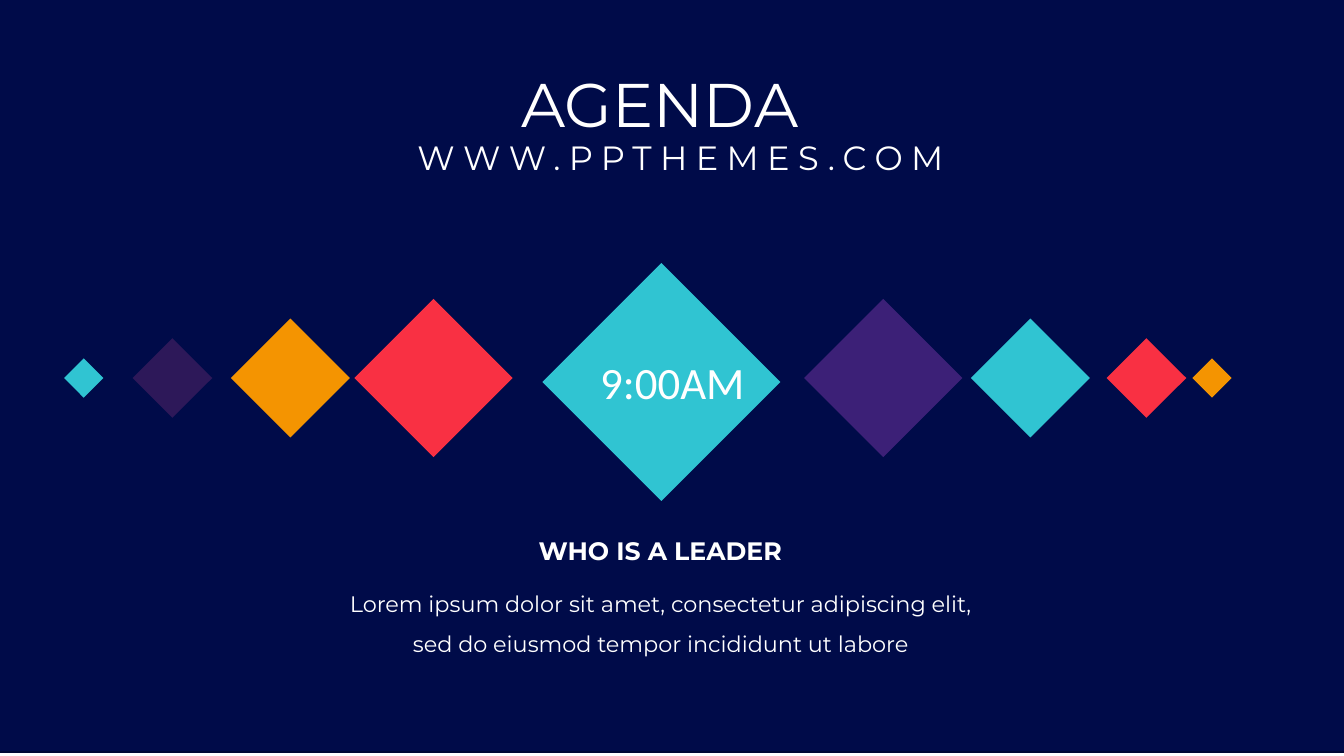
from pptx import Presentation
from pptx.dml.color import RGBColor
from pptx.enum.shapes import MSO_SHAPE as Shape
from pptx.enum.text import MSO_AUTO_SIZE as AutoSize, PP_ALIGN as Align
from pptx.util import Inches, Pt

COLORS = {
    "navy": "000B49", "edge": "000836", "teal": "30C4D2", "orange": "F49401",
    "purple": "3C2077", "plum": "2D1859", "red": "F93043", "white": "FFFFFF",
}

# Diamonds: centre x, centre y, size, colour
DIAMONDS = [
    (0.83, 3.75, 0.39, "teal"),
    (1.71, 3.75, 0.79, "plum"),
    (2.88, 3.75, 1.18, "orange"),
    (4.3, 3.75, 1.57, "red"),
    (6.56, 3.79, 2.36, "teal"),
    (8.76, 3.75, 1.57, "purple"),
    (10.22, 3.75, 1.18, "teal"),
    (11.37, 3.75, 0.79, "red"),
    (12.02, 3.75, 0.39, "orange"),
]

# Texts: wording, (left, top, width, height), size, other settings
TEXTS = [
    ("AGENDA", (3.35, 0.61, 6.39, 0.84), 44, {}),
    ("WWW.PPTHEMES.COM", (4.04, 1.31, 6.11, 0.5), 24,
     {"align": Align.LEFT, "letter_spacing": 6}),
    ("9:00AM", (5.63, 3.47, 2.08, 0.64), 32, {"font": "Calibri"}),
    ("WHO IS A LEADER", (5.23, 5.26, 2.64, 0.4), 18, {"bold": True, "wrap": False}),
    ("Lorem ipsum dolor sit amet, consectetur adipiscing elit, "
     "sed do eiusmod tempor incididunt ut labore",
     (3.32, 5.67, 6.47, 0.86), 16, {"line_spacing": 1.5}),
]


def color(name):
    return RGBColor.from_string(COLORS[name])


def add_filled(slide, kind, box, fill, line=None):
    shape = slide.shapes.add_shape(kind, *map(Inches, box))
    shape.shadow.inherit = False
    shape.fill.solid()
    shape.fill.fore_color.rgb = color(fill)
    if line:
        shape.line.color.rgb = color(line)
        shape.line.width = Pt(1)
    else:
        shape.line.fill.background()


def add_text(slide, text, box, size, font="Montserrat", align=Align.CENTER,
             bold=False, wrap=True, line_spacing=None, letter_spacing=None):
    frame = slide.shapes.add_textbox(*map(Inches, box)).text_frame
    frame.text = text
    frame.word_wrap = wrap
    frame.auto_size = AutoSize.SHAPE_TO_FIT_TEXT
    paragraph = frame.paragraphs[0]
    paragraph.alignment = align
    if line_spacing:
        paragraph.line_spacing = line_spacing
    run = paragraph.runs[0]
    run.font.name = font
    run.font.size = Pt(size)
    run.font.bold = bold
    run.font.color.rgb = color("white")
    if letter_spacing:
        run.font._element.set("spc", str(letter_spacing * 100))


presentation = Presentation()
presentation.slide_width = Inches(13.33)
presentation.slide_height = Inches(7.5)
slide = presentation.slides.add_slide(presentation.slide_layouts[6])

# Backdrop
add_filled(slide, Shape.RECTANGLE, (-0.01, -0.03, 13.39, 7.49), "navy", "edge")

# Row of diamonds
for center_x, center_y, size, fill in DIAMONDS:
    box = (center_x - size / 2, center_y - size / 2, size, size)
    add_filled(slide, Shape.DIAMOND, box, fill)

# Heading, time and description
for text, box, size, settings in TEXTS:
    add_text(slide, text, box, size, **settings)

presentation.save("out.pptx")
